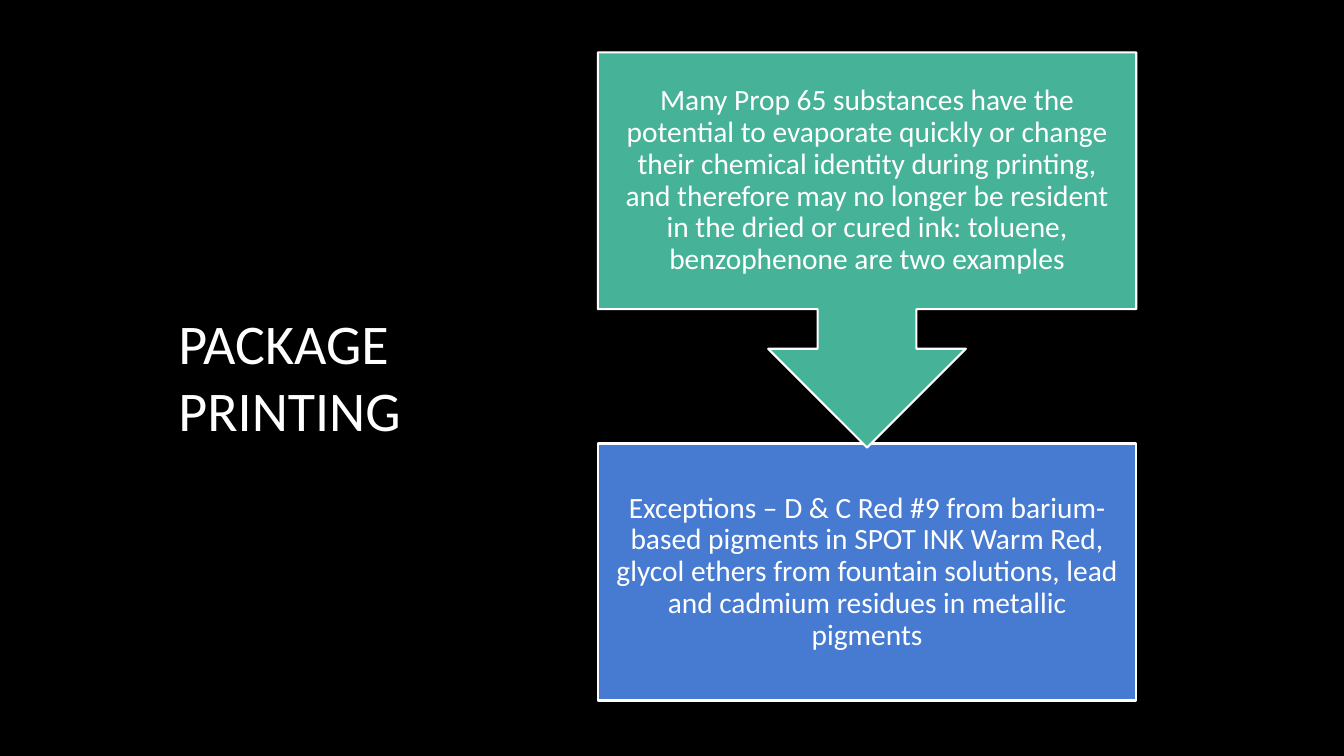
"""Builds the package printing slide: a callout pointing down to its exceptions."""
from dataclasses import dataclass

from pptx import Presentation
from pptx.dml.color import RGBColor
from pptx.enum.shapes import MSO_SHAPE as Shape
from pptx.enum.text import MSO_ANCHOR as Anchor, MSO_AUTO_SIZE as Fit, PP_ALIGN as Align
from pptx.util import Pt

PX = 9144
WHITE = "FFFFFF"
FONT = "Calibri"
LEFT, WIDTH, INSET = 593, 534, 16


@dataclass
class Panel:
    kind: Shape
    top: int
    height: int
    fill: str
    text: str


PANELS = [
    Panel(Shape.RECTANGLE, 440, 255, "477BD1",
          "Exceptions – D & C Red #9 from barium-based pigments in SPOT INK Warm Red, "
          "glycol ethers from fountain solutions, lead and cadmium residues in metallic pigments"),
    Panel(Shape.DOWN_ARROW_CALLOUT, 52, 392, "46B298",
          "Many Prop 65 substances have the potential to evaporate quickly or change their "
          "chemical identity during printing, and therefore may no longer be resident in the "
          "dried or cured ink: toluene, benzophenone are two examples"),
]


def paint(fill, color: str) -> None:
    fill.solid()
    fill.fore_color.rgb = RGBColor.from_string(color)


def write(frame, text: str, size: int, align: Align) -> None:
    frame.text = text
    frame.word_wrap = True
    frame.auto_size = Fit.NONE
    frame.vertical_anchor = Anchor.MIDDLE
    para = frame.paragraphs[0]
    para.alignment = align
    para.font.name = FONT
    para.font.size = Pt(size)
    paint(para.font.fill, WHITE)


def draw(slide, panel: Panel) -> None:
    shape = slide.shapes.add_shape(
        panel.kind, LEFT * PX, panel.top * PX, WIDTH * PX, panel.height * PX)
    shape.shadow.inherit = False
    paint(shape.fill, panel.fill)
    paint(shape.line.fill, WHITE)
    shape.line.width = Pt(1.5)
    frame = shape.text_frame
    frame.margin_left = frame.margin_right = INSET * PX
    frame.margin_top = frame.margin_bottom = INSET * PX
    write(frame, panel.text, 21, Align.CENTER)
    frame.paragraphs[0].line_spacing = 0.9


def main() -> None:
    deck = Presentation()
    deck.slide_width, deck.slide_height = 1333 * PX, 750 * PX
    slide = deck.slides.add_slide(deck.slide_layouts[5])
    paint(slide.background.fill, "000000")
    title = slide.shapes.title
    title.left, title.top = 167 * PX, 111 * PX
    title.width, title.height = 351 * PX, 524 * PX
    write(title.text_frame, "PACKAGE PRINTING", 40, Align.LEFT)
    for panel in PANELS:
        draw(slide, panel)
    deck.save("out.pptx")


if __name__ == "__main__":
    main()
